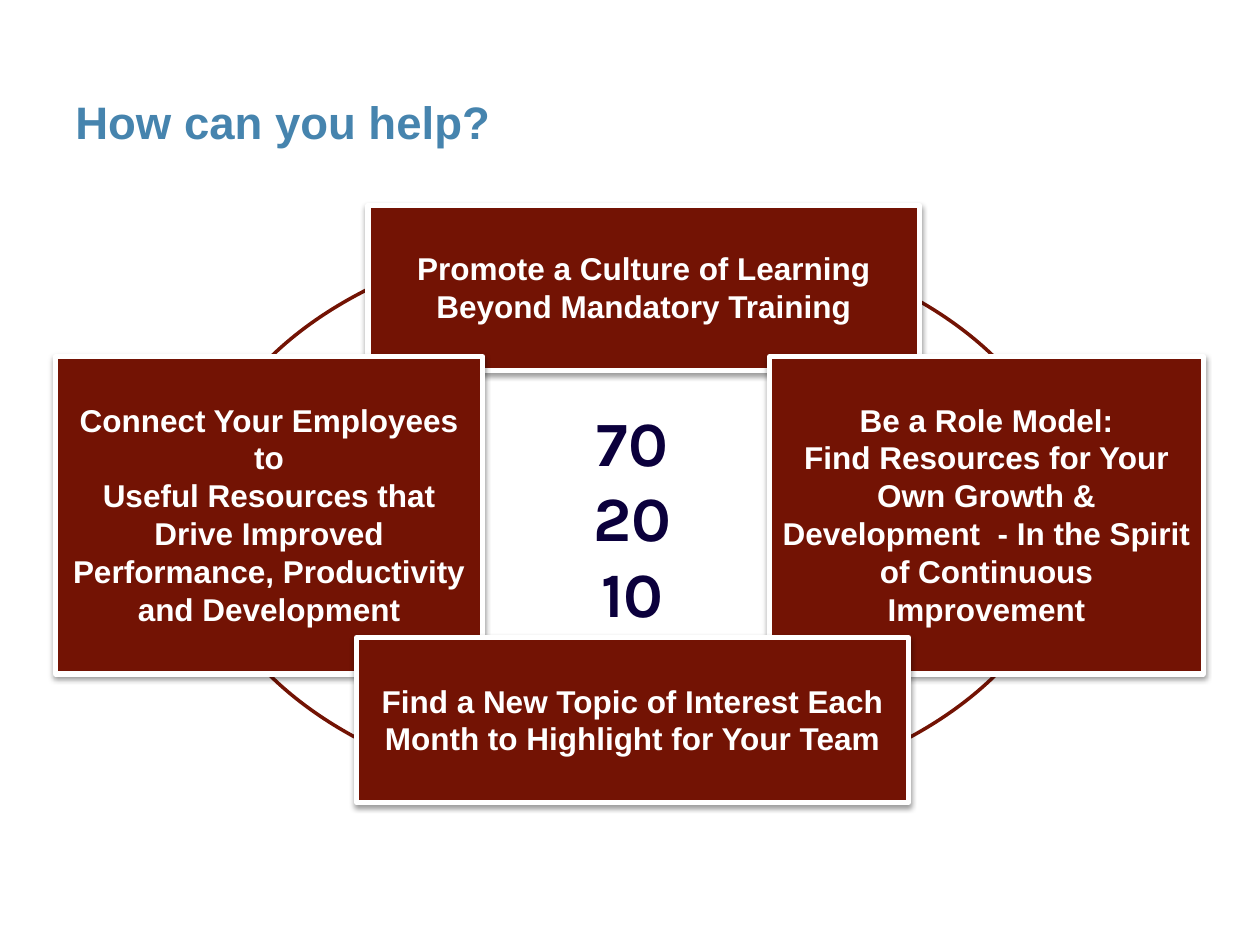
from dataclasses import dataclass

from lxml.etree import SubElement
from pptx import Presentation
from pptx.dml.color import RGBColor
from pptx.enum.shapes import MSO_SHAPE as Preset
from pptx.enum.text import MSO_ANCHOR as Anchor, PP_ALIGN as Align
from pptx.oxml.ns import qn
from pptx.shapes.autoshape import Shape
from pptx.slide import Slide
from pptx.util import Inches, Pt

MAROON, WHITE, NAVY, BLUE = "731304", "FFFFFF", "0B003C", "4684AE"


@dataclass(frozen=True)
class Suggestion:
    left: float
    top: float
    width: float
    height: float
    text: str


SUGGESTIONS = [
    Suggestion(2.92, 1.63, 4.38, 1.31,
               "Promote a Culture of Learning\nBeyond Mandatory Training"),
    Suggestion(0.44, 2.83, 3.39, 2.52,
               "Connect Your Employees to\vUseful Resources that Drive Improved "
               "Performance, Productivity and Development"),
    Suggestion(6.11, 2.83, 3.44, 2.52,
               "Be a Role Model:\nFind Resources for Your Own Growth & "
               "Development  - In the Spirit of Continuous Improvement"),
    Suggestion(2.83, 5.06, 4.38, 1.31,
               "Find a New Topic of Interest Each Month to Highlight for Your Team"),
]


def color(value: str) -> RGBColor:
    return RGBColor.from_string(value)


def write(shape: Shape, text: str, ink: str, align: Align, anchor: Anchor,
          font_format: dict) -> None:
    frame = shape.text_frame
    frame.word_wrap = True
    frame.vertical_anchor = anchor
    frame.text = text
    for paragraph in frame.paragraphs:
        paragraph.alignment = align
        for run in paragraph.runs:
            run.font.color.rgb = color(ink)
            for name, value in font_format.items():
                setattr(run.font, name, value)


def add_outlined(slide: Slide, preset: Preset, bounds: tuple, fill: str,
                 line: str, weight: float) -> Shape:
    shape = slide.shapes.add_shape(preset, *map(Inches, bounds))
    shape.shadow.inherit = False
    shape.fill.solid()
    shape.fill.fore_color.rgb = color(fill)
    shape.line.color.rgb = color(line)
    shape.line.width = Pt(weight)
    return shape


def add_soft_shadow(shape: Shape) -> None:
    effects = shape._element.spPr.find(qn("a:effectLst"))
    shadow = SubElement(effects, qn("a:outerShdw"), blurRad=str(Pt(3.1)),
                        dist=str(Pt(1.6)), dir="5400000", rotWithShape="0")
    tint = SubElement(shadow, qn("a:srgbClr"), val="000000")
    SubElement(tint, qn("a:alpha"), val="38000")


def add_suggestion(slide: Slide, item: Suggestion) -> None:
    bounds = (item.left, item.top, item.width, item.height)
    card = add_outlined(slide, Preset.RECTANGLE, bounds, MAROON, WHITE, 3)
    add_soft_shadow(card)
    card.text_frame.margin_top = Inches(0.35)
    write(card, item.text, WHITE, Align.CENTER, Anchor.TOP,
          {"name": "Arial", "size": Pt(18), "bold": True})


def main() -> None:
    deck = Presentation()
    deck.slide_width, deck.slide_height = Inches(10), Inches(7.5)
    slide = deck.slides.add_slide(deck.slide_layouts[6])

    title = slide.shapes.add_textbox(*map(Inches, (0.5, 0.41, 9, 1.11)))
    write(title, "How can you help?", BLUE, Align.LEFT, Anchor.MIDDLE,
          {"name": "Arial", "size": Pt(26), "bold": True})

    ratio = add_outlined(slide, Preset.OVAL, (1.56, 1.83, 6.92, 4.54),
                         WHITE, MAROON, 2)
    write(ratio, "70\n20\n10", NAVY, Align.CENTER, Anchor.MIDDLE,
          {"name": "Karla", "size": Pt(36), "bold": True})

    for item in SUGGESTIONS:
        add_suggestion(slide, item)

    deck.save("out.pptx")


if __name__ == "__main__":
    main()
